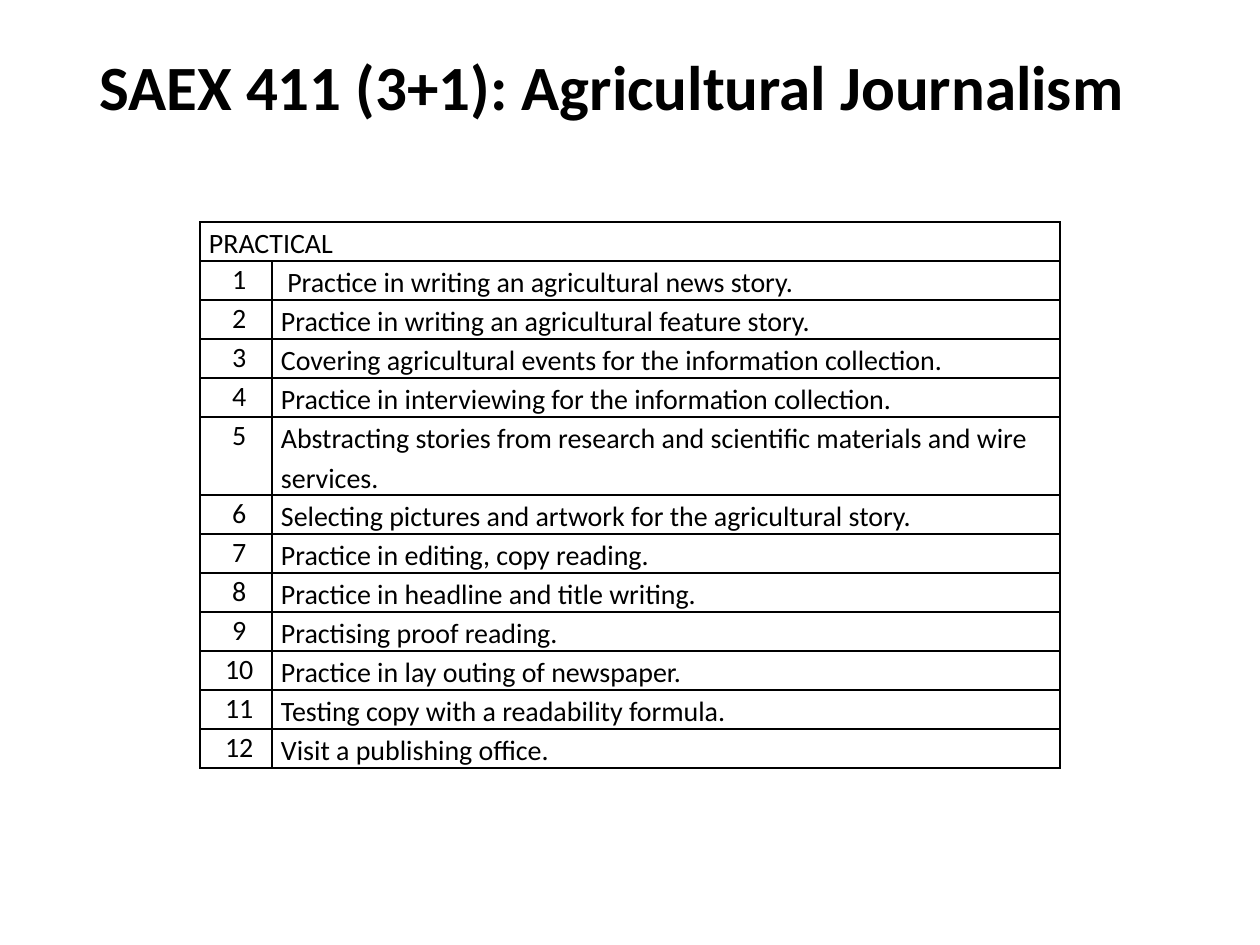
from lxml.etree import SubElement
from pptx import Presentation
from pptx.dml.color import RGBColor
from pptx.enum.text import MSO_ANCHOR, PP_ALIGN
from pptx.oxml.ns import qn
from pptx.util import Pt

BLACK = RGBColor(0x00, 0x00, 0x00)
WHITE = RGBColor(0xFF, 0xFF, 0xFF)
TASKS = [
    " Practice in writing an agricultural news story.",
    "Practice in writing an agricultural feature story.",
    "Covering agricultural events for the information collection.",
    "Practice in interviewing for the information collection.",
    "Abstracting stories from research and scientific materials and wire services.",
    "Selecting pictures and artwork for the agricultural story.",
    "Practice in editing, copy reading.",
    "Practice in headline and title writing.",
    "Practising proof reading.",
    "Practice in lay outing of newspaper.",
    "Testing copy with a readability formula.",
    "Visit a publishing office.",
]


def px(n):
    return round(n * 914400 / 126)


def write(tf, text, size=16, bold=False, align=PP_ALIGN.LEFT, spacing=1.15,
          after=0, font="Calibri", color=BLACK):
    tf.word_wrap = True
    p = tf.paragraphs[0]
    p.alignment = align
    p.line_spacing = spacing
    p.space_after = Pt(after)
    r = p.add_run()
    r.text = text
    r.font.name = font
    r.font.size = Pt(size)
    r.font.bold = bold
    r.font.color.rgb = color


class Deck:
    def __init__(self, width, height):
        self.prs = Presentation()
        self.prs.slide_width, self.prs.slide_height = px(width), px(height)
        self.line_color, self.line_width = BLACK, Pt(1)

    def slide(self):
        self.s = self.prs.slides.add_slide(self.prs.slide_layouts[6])
        fill = self.s.background.fill
        fill.solid()
        fill.fore_color.rgb = WHITE

    def title(self, text, x, y, w, h):
        tf = self.s.shapes.add_textbox(px(x), px(y), px(w), px(h)).text_frame
        tf.margin_top = tf.margin_bottom = 0
        tf.vertical_anchor = MSO_ANCHOR.TOP
        write(tf, text, size=36, bold=True, spacing=0.9)

    def border(self, cell):
        tc_pr = cell._tc.get_or_add_tcPr()
        for side in ("a:lnL", "a:lnR", "a:lnT", "a:lnB"):
            ln = SubElement(tc_pr, qn(side), w=str(self.line_width))
            fill = SubElement(ln, qn("a:solidFill"))
            SubElement(fill, qn("a:srgbClr"), val=str(self.line_color))

    def cell(self, cell, text, **fmt):
        cell.margin_left = cell.margin_right = px(9)
        cell.margin_top = cell.margin_bottom = 0
        write(cell.text_frame, text, after=8, **fmt)

    def table(self, heading, items, x, y, cols, row_h, tall_rows):
        heights = [row_h * tall_rows.get(i, 1) for i in range(len(items) + 1)]
        table = self.s.shapes.add_table(
            len(heights), len(cols), px(x), px(y), px(sum(cols)), px(sum(heights))).table
        table.first_row = table.horz_banding = False
        for col, w in zip(table.columns, cols):
            col.width = px(w)
        for row, h in zip(table.rows, heights):
            row.height = px(h)
        for cell in table.iter_cells():
            self.border(cell)
            cell.fill.background()
        table.cell(0, 0).merge(table.cell(0, 1))
        self.cell(table.cell(0, 0), heading)
        for n, item in enumerate(items, 1):
            self.cell(table.cell(n, 0), f" {n}", align=PP_ALIGN.CENTER, spacing=1.06)
            self.cell(table.cell(n, 1), item)


def main():
    deck = Deck(1260, 945)
    deck.slide()
    deck.title("SAEX 411 (3+1): Agricultural Journalism", 87, 56, 1086, 70)
    deck.table("PRACTICAL", TASKS, 200, 222, cols=(72, 788), row_h=39, tall_rows={5: 2})
    deck.prs.save("out.pptx")


if __name__ == "__main__":
    main()
